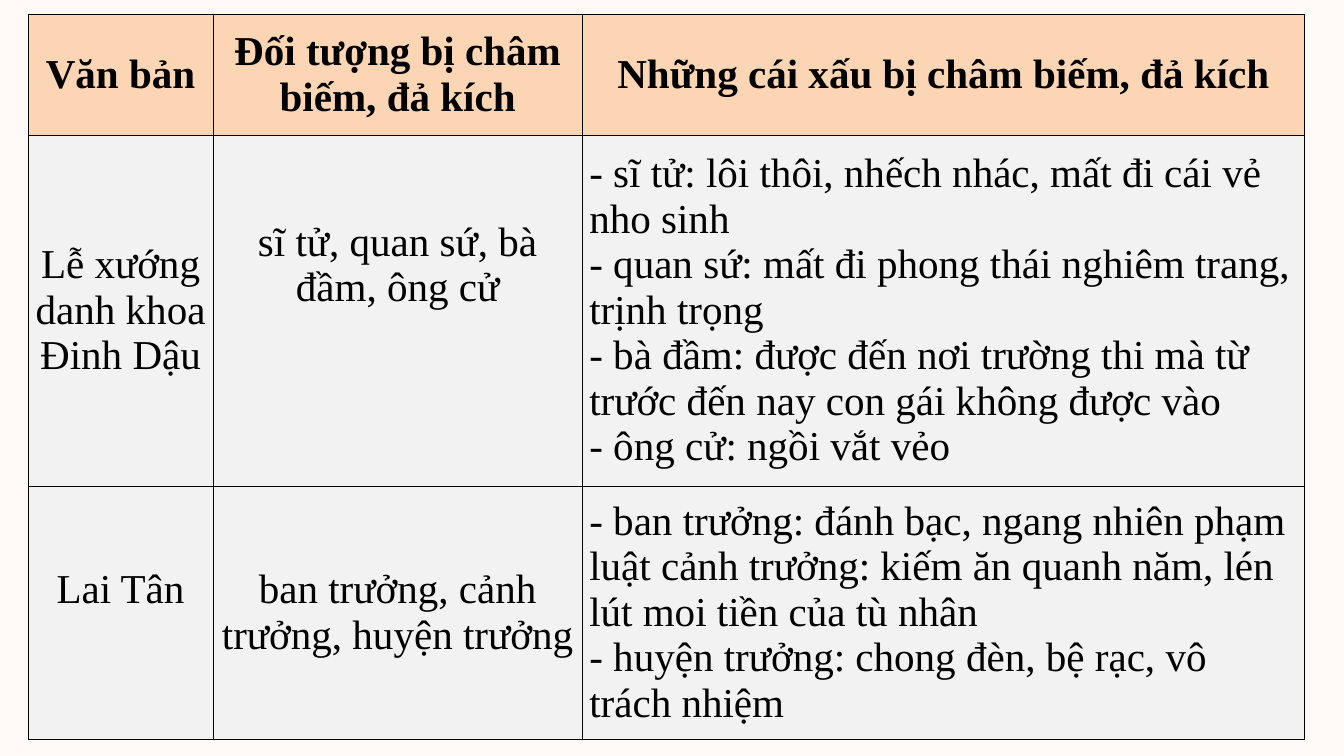
from lxml.etree import SubElement
from pptx import Presentation
from pptx.dml.color import RGBColor
from pptx.enum.text import MSO_ANCHOR, PP_ALIGN
from pptx.oxml.ns import qn
from pptx.util import Cm, Pt

FONT, SIZE = "Times New Roman", 44
BACKGROUND, HEADER_FILL, BODY_FILL, INK = "FFFAF7", "FCD5B5", "F2F2F2", "000000"
COLUMN_WIDTHS = [6.98, 13.97, 27.3]
ROW_HEIGHTS = [4.57, 13.27, 9.58]
LEFT, TOP = 1.07, 0.53
LINE_HEIGHT, MARGIN = 1.72, 0.13
ROWS = [
    [
        ["Văn bản"],
        ["Đối tượng bị châm biếm, đả kích"],
        ["Những cái xấu bị châm biếm, đả kích"],
    ],
    [
        ["Lễ xướng danh khoa Đinh Dậu"],
        ["sĩ tử, quan sứ, bà đầm, ông cử"],
        [
            "- sĩ tử: lôi thôi, nhếch nhác, mất đi cái vẻ nho sinh",
            "- quan sứ: mất đi phong thái nghiêm trang, trịnh trọng",
            "- bà đầm: được đến nơi trường thi mà từ trước đến nay con gái không được vào",
            "- ông cử: ngồi vắt vẻo",
        ],
    ],
    [
        ["Lai Tân"],
        ["ban trưởng, cảnh trưởng, huyện trưởng"],
        [
            "- ban trưởng: đánh bạc, ngang nhiên phạm luật cảnh trưởng: "
            "kiếm ăn quanh năm, lén lút moi tiền của tù nhân",
            "- huyện trưởng: chong đèn, bệ rạc, vô trách nhiệm",
        ],
    ],
]
LINES_BELOW = {(1, 1): 2, (2, 0): 1}


def paint(fill, color):
    fill.solid()
    fill.fore_color.rgb = RGBColor.from_string(color)


def add_borders(cell):
    properties = cell._tc.get_or_add_tcPr()
    for index, side in enumerate(("lnL", "lnR", "lnT", "lnB")):
        line = properties.makeelement(qn(f"a:{side}"), {"w": str(Pt(1))})
        properties.insert(index, line)
        SubElement(SubElement(line, qn("a:solidFill")), qn("a:srgbClr"), val=INK)


def fill_cell(cell, lines, header, centred, lines_below):
    paint(cell.fill, HEADER_FILL if header else BODY_FILL)
    add_borders(cell)
    cell.vertical_anchor = MSO_ANCHOR.MIDDLE
    cell.margin_bottom = Cm(MARGIN + lines_below * LINE_HEIGHT)
    cell.text_frame.text = "\n".join(lines)
    for para in cell.text_frame.paragraphs:
        para.alignment = PP_ALIGN.CENTER if centred else PP_ALIGN.LEFT
        for span in para.runs:
            span.font.name, span.font.size = FONT, Pt(SIZE)
            span.font.bold = header
            paint(span.font.fill, INK)


def main():
    deck = Presentation()
    deck.slide_width, deck.slide_height = Cm(50.8), Cm(28.58)
    page = deck.slides.add_slide(deck.slide_layouts[6])
    paint(page.background.fill, BACKGROUND)

    table = page.shapes.add_table(
        len(ROWS), len(COLUMN_WIDTHS), Cm(LEFT), Cm(TOP),
        Cm(sum(COLUMN_WIDTHS)), Cm(sum(ROW_HEIGHTS)),
    ).table
    table.horz_banding = False
    for column, width in zip(table.columns, COLUMN_WIDTHS):
        column.width = Cm(width)
    for row, height in zip(table.rows, ROW_HEIGHTS):
        row.height = Cm(height)

    for r, row in enumerate(ROWS):
        for c, lines in enumerate(row):
            header = r == 0
            fill_cell(table.cell(r, c), lines, header, header or c < 2,
                      LINES_BELOW.get((r, c), 0))

    deck.save("out.pptx")


if __name__ == "__main__":
    main()
